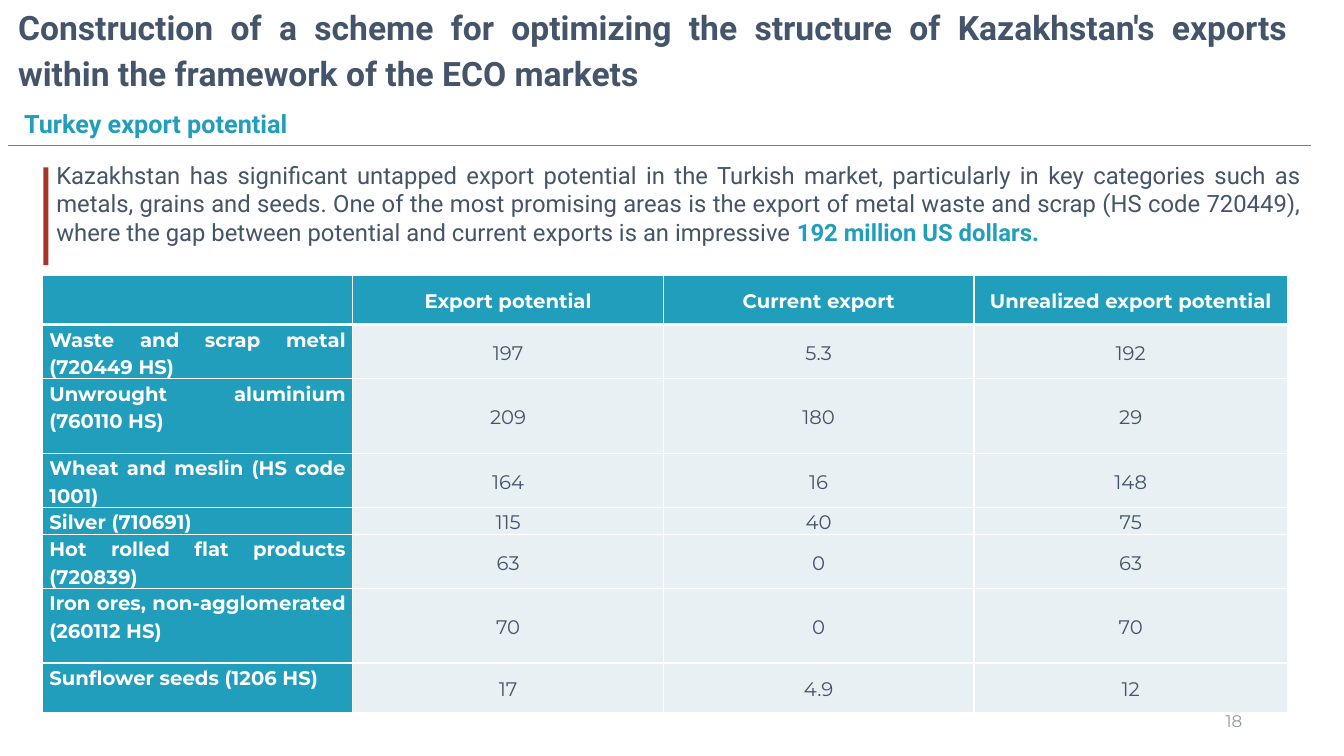
from dataclasses import dataclass

import lxml.etree
import pptx
import pptx.dml.color
import pptx.enum.shapes
import pptx.enum.text
import pptx.oxml.ns
import pptx.util

Inches = pptx.util.Inches
Align = pptx.enum.text.PP_ALIGN
Anchor = pptx.enum.text.MSO_ANCHOR


@dataclass(frozen=True)
class Theme:
    text_font: str = "Roboto"
    table_font: str = "Montserrat"
    dark: str = "44546A"
    accent: str = "219EBC"
    bar: str = "AB3428"
    pale: str = "E8F0F3"
    white: str = "FFFFFF"
    muted: str = "9499A1"
    title_size: int = 24
    subtitle_size: int = 18
    body_size: int = 17
    table_size: int = 14
    number_size: int = 12


THEME = Theme()

TITLE = (
    "Construction of a scheme for optimizing the structure of Kazakhstan's "
    "exports within the framework of the ECO markets"
)
SUMMARY = (
    "Kazakhstan has significant untapped export potential in the Turkish market, "
    "particularly in key categories such as metals, grains and seeds. One of the "
    "most promising areas is the export of metal waste and scrap (HS code 720449), "
    "where the gap between potential and current exports is an impressive "
)
EXPORTS = [
    ("", "Export potential", "Current export", "Unrealized export potential"),
    ("Waste and scrap metal (720449 HS)", "197", "5.3", "192"),
    ("Unwrought aluminium (760110 HS)", "209", "180", "29"),
    ("Wheat and meslin (HS code 1001)", "164", "16", "148"),
    ("Silver (710691)", "115", "40", "75"),
    ("Hot rolled flat products (720839)", "63", "0", "63"),
    ("Iron ores, non-agglomerated (260112 HS)", "70", "0", "70"),
    ("Sunflower seeds (1206 HS)", "17", "4.9", "12"),
]
COLUMN_WIDTHS = [3.08, 3.08, 3.08, 3.11]
ROW_HEIGHTS = [0.49, 0.52, 0.74, 0.52, 0.25, 0.49, 0.74, 0.49]


def rgb(color):
    return pptx.dml.color.RGBColor.from_string(color)


def format_run(run, font, size, color, bold=False):
    run.font.name = font
    run.font.size = pptx.util.Pt(size)
    run.font.color.rgb = rgb(color)
    run.font.bold = bold


def format_paragraph(paragraph, alignment, spacing=1.0, after=0):
    paragraph.alignment = alignment
    paragraph.line_spacing = spacing
    paragraph.space_before = pptx.util.Pt(0)
    paragraph.space_after = pptx.util.Pt(after)


def add_title(slide, text):
    title = slide.shapes.title
    title.left, title.top = Inches(0.08), Inches(0.09)
    title.width, title.height = Inches(12.79), Inches(0.75)
    frame = title.text_frame
    frame.text = text
    frame.auto_size = pptx.enum.text.MSO_AUTO_SIZE.NONE
    frame.vertical_anchor = Anchor.MIDDLE
    paragraph = frame.paragraphs[0]
    format_paragraph(paragraph, Align.JUSTIFY, 1.15, 6)
    format_run(paragraph.runs[0], THEME.text_font, THEME.title_size, THEME.dark, True)


def add_text(slide, box, text, alignment, anchor=Anchor.TOP, spacing=1.0, after=0):
    shape = slide.shapes.add_textbox(*map(Inches, box))
    frame = shape.text_frame
    frame.word_wrap = True
    frame.vertical_anchor = anchor
    frame.text = text
    format_paragraph(frame.paragraphs[0], alignment, spacing, after)
    return frame.paragraphs[0]


def add_rule(slide, left, right, top):
    rule = slide.shapes.add_connector(
        pptx.enum.shapes.MSO_CONNECTOR.STRAIGHT,
        Inches(left), Inches(top), Inches(right), Inches(top),
    )
    rule.line.color.rgb = rgb(THEME.accent)
    rule.line.width = pptx.util.Pt(0.5)
    properties = rule._element.spPr
    lxml.etree.SubElement(properties, pptx.oxml.ns.qn("a:effectLst"))


def add_bar(slide, box):
    bar = slide.shapes.add_shape(
        pptx.enum.shapes.MSO_SHAPE.RECTANGLE, *map(Inches, box)
    )
    bar.shadow.inherit = False
    bar.fill.solid()
    bar.fill.fore_color.rgb = rgb(THEME.bar)
    bar.line.fill.background()


def set_borders(cell, widths):
    properties = cell._tc.get_or_add_tcPr()
    qualify = pptx.oxml.ns.qn
    for side, width in zip("LRTB", widths):
        border = lxml.etree.SubElement(
            properties, qualify(f"a:ln{side}"), w=str(pptx.util.Pt(width))
        )
        fill = lxml.etree.SubElement(border, qualify("a:solidFill"))
        lxml.etree.SubElement(fill, qualify("a:srgbClr"), val=THEME.white)


def format_cell(cell, text, is_header, is_label):
    set_borders(cell, (1, 1, 1, 3 if is_header else 1))
    colored = is_header or is_label
    cell.fill.solid()
    cell.fill.fore_color.rgb = rgb(THEME.accent if colored else THEME.pale)
    cell.margin_left = cell.margin_right = Inches(0.07)
    cell.margin_top = cell.margin_bottom = 0
    cell.vertical_anchor = Anchor.TOP if is_label else Anchor.MIDDLE
    if not text:
        return
    cell.text_frame.text = text
    paragraph = cell.text_frame.paragraphs[0]
    format_paragraph(paragraph, Align.JUSTIFY if is_label else Align.CENTER, 1.15, 10)
    color = THEME.white if colored else THEME.dark
    format_run(paragraph.runs[0], THEME.table_font, THEME.table_size, color, colored)


def add_export_table(slide, left, top):
    table = slide.shapes.add_table(
        len(EXPORTS), len(COLUMN_WIDTHS), Inches(left), Inches(top),
        Inches(sum(COLUMN_WIDTHS)), Inches(sum(ROW_HEIGHTS)),
    ).table
    for column, width in zip(table.columns, COLUMN_WIDTHS):
        column.width = Inches(width)
    for row, height in zip(table.rows, ROW_HEIGHTS):
        row.height = Inches(height)
    for row_index, values in enumerate(EXPORTS):
        for column_index, text in enumerate(values):
            cell = table.cell(row_index, column_index)
            format_cell(cell, text, row_index == 0, column_index == 0)


def main():
    presentation = pptx.Presentation()
    presentation.slide_width = Inches(13.33)
    presentation.slide_height = Inches(7.5)
    slide = presentation.slides.add_slide(presentation.slide_layouts[5])

    add_title(slide, TITLE)
    add_rule(slide, 0.08, 13, 1.44)
    number = add_text(slide, (9.42, 6.95, 3, 0.4), "18", Align.RIGHT, Anchor.MIDDLE)
    format_run(number.runs[0], THEME.table_font, THEME.number_size, THEME.muted)
    add_bar(slide, (0.43, 1.66, 0.05, 0.97))
    add_export_table(slide, 0.42, 2.73)

    summary = add_text(slide, (0.46, 1.54, 12.55, 1.25), SUMMARY, Align.JUSTIFY)
    format_run(summary.runs[0], THEME.text_font, THEME.body_size, THEME.dark)
    amount = summary.add_run()
    amount.text = "192 million US dollars."
    format_run(amount, THEME.text_font, THEME.body_size, THEME.accent, True)

    subtitle = add_text(
        slide, (0.14, 0.98, 4.31, 0.43), "Turkey export potential",
        Align.JUSTIFY, spacing=1.15, after=6,
    )
    format_run(
        subtitle.runs[0], THEME.text_font, THEME.subtitle_size, THEME.accent, True
    )
    presentation.save("out.pptx")


if __name__ == "__main__":
    main()
